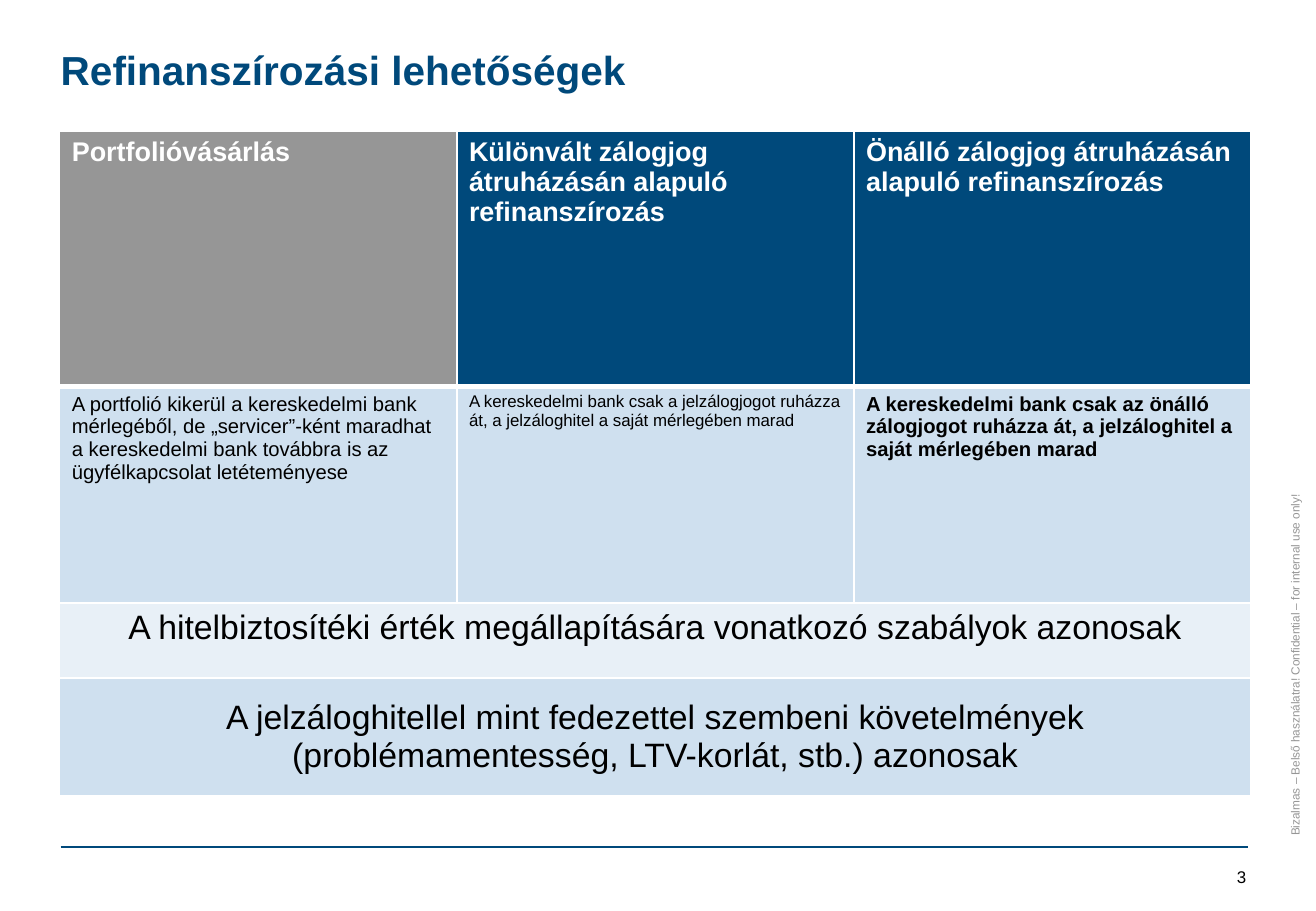
"""Build the slide comparing refinancing options."""
import pptx
import pptx.dml.color
import pptx.enum.shapes
import pptx.enum.text
import pptx.oxml
import pptx.oxml.ns
import pptx.util

Pt = pptx.util.Pt
RGBColor = pptx.dml.color.RGBColor
ALIGN = pptx.enum.text.PP_ALIGN
ANCHOR = pptx.enum.text.MSO_ANCHOR

NAVY = RGBColor(0x00, 0x49, 0x7B)
GRAY = RGBColor(0x96, 0x96, 0x96)
BLUE = RGBColor(0xCF, 0xE0, 0xEF)
PALE = RGBColor(0xE8, 0xF0, 0xF7)
WHITE = RGBColor(0xFF, 0xFF, 0xFF)
BLACK = RGBColor(0x00, 0x00, 0x00)

PAGE_WIDTH, PAGE_HEIGHT = 780, 540
ROW_HEIGHTS = (151.2, 128.2, 44.6, 69.8)
HEADERS = (
    ("Portfolióvásárlás", GRAY),
    ("Különvált zálogjog átruházásán alapuló refinanszírozás", NAVY),
    ("Önálló zálogjog átruházásán alapuló refinanszírozás", NAVY),
)
DETAILS = (
    ("A portfolió kikerül a kereskedelmi bank mérlegéből, de „servicer”-ként maradhat "
     "a kereskedelmi bank továbbra is az ügyfélkapcsolat letéteményese", 12, False),
    ("A kereskedelmi bank csak a jelzálogjogot ruházza át, "
     "a jelzáloghitel a saját mérlegében marad", 10, False),
    ("A kereskedelmi bank csak az önálló zálogjogot ruházza át, "
     "a jelzáloghitel a saját mérlegében marad", 12, True),
)
SHARED_RULES = (
    ("A hitelbiztosítéki érték megállapítására vonatkozó szabályok azonosak", PALE, ANCHOR.TOP),
    ("A jelzáloghitellel mint fedezettel szembeni követelmények "
     "(problémamentesség, LTV-korlát, stb.) azonosak", BLUE, ANCHOR.MIDDLE),
)


def write_text(frame, text, size=12, color=BLACK, bold=False, align=ALIGN.LEFT):
    """Write one formatted paragraph into a text frame."""
    para = frame.paragraphs[0]
    para.alignment = align
    span = para.add_run()
    span.text = text
    span.font.name = "Arial"
    span.font.size = Pt(size)
    span.font.bold = bold
    span.font.color.rgb = color


def add_text_box(page, box, text, anchor=ANCHOR.MIDDLE, wrap=False, **text_format):
    """Add a text box without insets and return its shape."""
    shape = page.shapes.add_textbox(*map(Pt, box))
    frame = shape.text_frame
    frame.margin_left = frame.margin_right = 0
    frame.margin_top = frame.margin_bottom = 0
    frame.vertical_anchor = anchor
    frame.word_wrap = wrap
    write_text(frame, text, **text_format)
    return shape


def add_borders(cell, top=1, bottom=1):
    """Draw white borders around a table cell."""
    properties = cell._tc.get_or_add_tcPr()
    for side, width in (("L", 1), ("R", 1), ("T", top), ("B", bottom)):
        properties.append(pptx.oxml.parse_xml(
            f'<a:ln{side} {pptx.oxml.ns.nsdecls("a")} w="{Pt(width)}">'
            f'<a:solidFill><a:srgbClr val="{WHITE}"/></a:solidFill></a:ln{side}>'))


def fill_cell(cell, text, fill, anchor=ANCHOR.TOP, **text_format):
    """Color a table cell and write its text."""
    cell.fill.solid()
    cell.fill.fore_color.rgb = fill
    cell.vertical_anchor = anchor
    write_text(cell.text_frame, text, **text_format)


def add_options_table(page, box):
    """Add the table of refinancing options and their shared rules."""
    columns = len(HEADERS)
    table = page.shapes.add_table(len(ROW_HEIGHTS), columns, *map(Pt, box)).table
    for column in table.columns:
        column.width = Pt(box[2] / columns)
    for index, height in enumerate(ROW_HEIGHTS):
        table.rows[index].height = Pt(height)
        for column in range(columns):
            add_borders(table.cell(index, column),
                        top=3 if index == 1 else 1, bottom=3 if index == 0 else 1)
    for column, (text, fill) in enumerate(HEADERS):
        fill_cell(table.cell(0, column), text, fill, size=16, color=WHITE, bold=True)
    for column, (text, size, bold) in enumerate(DETAILS):
        fill_cell(table.cell(1, column), text, BLUE, size=size, bold=bold)
    for row, (text, fill, anchor) in enumerate(SHARED_RULES, start=2):
        table.cell(row, 0).merge(table.cell(row, columns - 1))
        fill_cell(table.cell(row, 0), text, fill, anchor, size=20, align=ALIGN.CENTER)


def add_footer(page, box):
    """Add the footer rule and the page number below its right end."""
    left, top, width, height = box
    rule = page.shapes.add_connector(
        pptx.enum.shapes.MSO_CONNECTOR.STRAIGHT,
        Pt(left), Pt(top), Pt(left + width), Pt(top))
    rule.line.color.rgb = NAVY
    rule.line.width = Pt(1)
    rule._element.spPr.append(
        pptx.oxml.parse_xml(f'<a:effectLst {pptx.oxml.ns.nsdecls("a")}/>'))
    number_box = (left + width - 13.4, top + height - 11, 12, 11)
    add_text_box(page, number_box, "3", anchor=ANCHOR.BOTTOM, wrap=True,
                 size=10, align=ALIGN.RIGHT)


def add_side_note(page, box):
    """Add the confidentiality note, reading upward along the box."""
    left, top, width, height = box
    flat_box = (left + (width - height) / 2, top + (height - width) / 2, height, width)
    note = add_text_box(
        page, flat_box, "Bizalmas – Belső használatra! Confidential – for internal use only!",
        wrap=True, size=7, color=GRAY)
    note.rotation = 270


def main():
    """Create the deck and save it."""
    deck = pptx.Presentation()
    deck.slide_width, deck.slide_height = Pt(PAGE_WIDTH), Pt(PAGE_HEIGHT)
    page = deck.slides.add_slide(deck.slide_layouts[6])
    add_text_box(page, (36, 8, 708, 66), "Refinanszírozási lehetőségek",
                 wrap=True, size=24, color=NAVY, bold=True)
    add_options_table(page, (35.4, 78, 706.2, sum(ROW_HEIGHTS)))
    add_footer(page, (36, 502, 704, 24))
    add_side_note(page, (763.2, 286.6, 8.6, 208.8))
    deck.save("out.pptx")


if __name__ == "__main__":
    main()
